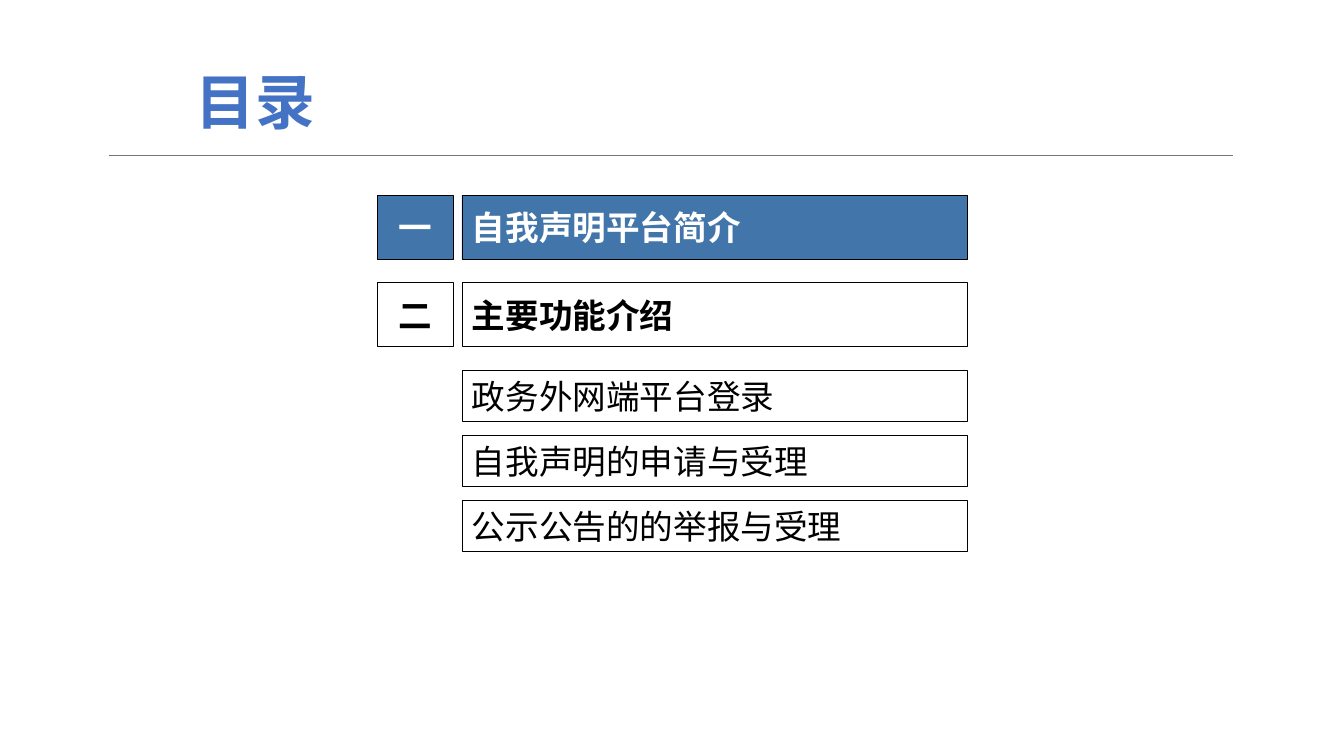
from lxml.etree import SubElement
from pptx import Presentation
from pptx.dml.color import RGBColor
from pptx.enum.shapes import MSO_CONNECTOR, MSO_SHAPE
from pptx.enum.text import MSO_ANCHOR, MSO_AUTO_SIZE, PP_ALIGN
from pptx.oxml.ns import qn
from pptx.util import Pt

HEADING = "目录"
CHAPTERS = [("一", "自我声明平台简介"), ("二", "主要功能介绍")]
CURRENT_CHAPTER = 0
TOPICS = ["政务外网端平台登录", "自我声明的申请与受理", "公示公告的的举报与受理"]

FONT = "Times New Roman"
COLORS = {"title": "4472C4", "rule": "767676", "active": "4276AA",
          "white": "FFFFFF", "black": "000000"}

NUMBER_LEFT, NUMBER_WIDTH = 269.4, 54.2
ENTRY_LEFT, ENTRY_WIDTH = 330, 360.8
CHAPTER_TOP, CHAPTER_HEIGHT, CHAPTER_STEP = 139.5, 45.7, 62.4
TOPIC_TOP, TOPIC_HEIGHT, TOPIC_STEP = 264.5, 36.6, 46.5


def color(name):
    return RGBColor.from_string(COLORS[name])


def style_text(shape, text, size, ink, bold, align):
    frame = shape.text_frame
    frame.word_wrap = True
    frame.auto_size = MSO_AUTO_SIZE.NONE
    frame.vertical_anchor = MSO_ANCHOR.MIDDLE
    frame.text = text
    paragraph = frame.paragraphs[0]
    paragraph.alignment = align
    font = paragraph.font
    font.name, font.size, font.bold = FONT, Pt(size), bold
    font.color.rgb = color(ink)
    return paragraph


def add_box(slide, text, left, top, width, height, active=False, bold=False,
            align=PP_ALIGN.LEFT):
    box = slide.shapes.add_shape(MSO_SHAPE.RECTANGLE, Pt(left), Pt(top), Pt(width), Pt(height))
    box.shadow.inherit = False
    box.fill.solid()
    box.fill.fore_color.rgb = color("active" if active else "white")
    box.line.color.rgb = color("black")
    box.line.width = Pt(0.5)
    style_text(box, text, 24, "white" if active else "black", bold, align)


def add_title(slide):
    title = slide.shapes.title
    title.left, title.top, title.width, title.height = Pt(64), Pt(45.4), Pt(237), Pt(51.8)
    paragraph = style_text(title, HEADING, 42.7, "title", True, PP_ALIGN.CENTER)
    paragraph.line_spacing = 1.02
    rule = slide.shapes.add_connector(MSO_CONNECTOR.STRAIGHT, Pt(77.8), Pt(111.3),
                                      Pt(880.6), Pt(111.3))
    rule.line.color.rgb = color("rule")
    rule.line.width = Pt(0.5)
    SubElement(rule.line._get_or_add_ln().getparent(), qn("a:effectLst"))


def main():
    deck = Presentation()
    deck.slide_width, deck.slide_height = Pt(960), Pt(540)
    slide = deck.slides.add_slide(deck.slide_layouts[5])
    add_title(slide)
    for index, (number, chapter) in enumerate(CHAPTERS):
        top = CHAPTER_TOP + index * CHAPTER_STEP
        active = index == CURRENT_CHAPTER
        add_box(slide, number, NUMBER_LEFT, top, NUMBER_WIDTH, CHAPTER_HEIGHT,
                active, True, PP_ALIGN.CENTER)
        add_box(slide, chapter, ENTRY_LEFT, top, ENTRY_WIDTH, CHAPTER_HEIGHT, active, True)
    for index, topic in enumerate(TOPICS):
        add_box(slide, topic, ENTRY_LEFT, TOPIC_TOP + index * TOPIC_STEP,
                ENTRY_WIDTH, TOPIC_HEIGHT)
    deck.save("out.pptx")


if __name__ == "__main__":
    main()
